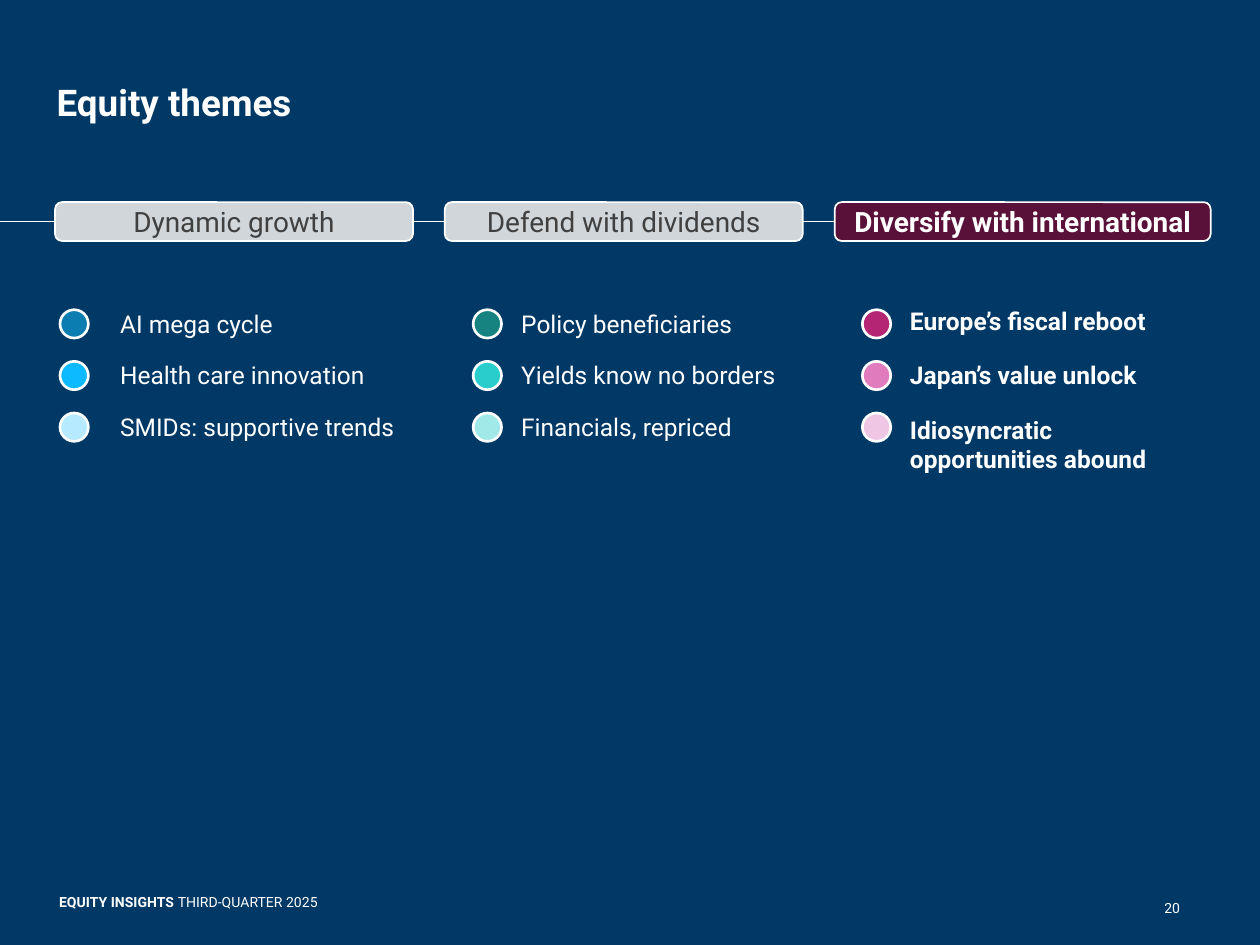
from pptx import Presentation
from pptx.dml.color import RGBColor
from pptx.enum import shapes, text
from pptx.oxml.ns import qn
from pptx.util import Pt
from lxml import etree

HUES = {
    "navy": "003866", "white": "FFFFFF", "grey": "D1D6DA", "ink": "404040",
    "wine": "5A1139",
    "blue": "0B7DB1", "sky": "0DB9FF", "ice": "B6EAFF",
    "teal": "168381", "aqua": "29CECC", "mint": "A1E8E8",
    "rose": "B42573", "pink": "E07CBD", "blush": "EFC6E4",
}
LEFT, MID, RIGHT = text.PP_ALIGN.LEFT, text.PP_ALIGN.CENTER, text.PP_ALIGN.RIGHT


def hue(name):
    return RGBColor.from_string(HUES[name])


class Deck:
    """Holds the font and the current slide; all lengths are in points."""

    def __init__(self, wide, high, font):
        self.file = Presentation()
        self.file.slide_width, self.file.slide_height = Pt(wide), Pt(high)
        self.font = font

    def page(self, fill):
        self.slide = self.file.slides.add_slide(self.file.slide_layouts[6])
        back = self.slide.background.fill
        back.solid()
        back.fore_color.rgb = hue(fill)

    def letter(self, shape, runs, size, tint="white", align=LEFT, anchor="TOP", lead=None):
        """Fill a shape with one paragraph of (words, bold) runs."""
        frame = shape.text_frame
        frame.word_wrap = True
        frame.margin_left = frame.margin_right = Pt(0)
        frame.margin_top = frame.margin_bottom = Pt(0)
        frame.vertical_anchor = text.MSO_ANCHOR[anchor]
        para = frame.paragraphs[0]
        para.alignment = align
        if lead:
            para.line_spacing = lead
        for words, bold in runs:
            run = para.add_run()
            run.text = words
            run.font.name, run.font.size, run.font.bold = self.font, Pt(size), bold
            run.font.color.rgb = hue(tint)

    def label(self, x, y, w, h, runs, size, **style):
        box = self.slide.shapes.add_textbox(Pt(x), Pt(y), Pt(w), Pt(h))
        self.letter(box, runs, size, **style)

    def shape(self, kind, x, y, w, h, fill, edge):
        item = self.slide.shapes.add_shape(kind, Pt(x), Pt(y), Pt(w), Pt(h))
        item.shadow.inherit = False
        item.fill.solid()
        item.fill.fore_color.rgb = hue(fill)
        item.line.color.rgb = hue("white")
        item.line.width = Pt(edge)
        return item

    def tab(self, x, y, w, h, fill, words, tint, bold):
        item = self.shape(shapes.MSO_SHAPE.ROUNDED_RECTANGLE, x, y, w, h, fill, 1)
        item.adjustments[0] = 0.18
        self.letter(item, [(words, bold)], 16, tint=tint, align=MID, anchor="MIDDLE")

    def dot(self, x, y, size, fill):
        self.shape(shapes.MSO_SHAPE.OVAL, x, y, size, size, fill, 1.5)

    def rule(self, x, y, end, width):
        line = self.slide.shapes.add_connector(
            shapes.MSO_CONNECTOR.STRAIGHT, Pt(x), Pt(y), Pt(end), Pt(y))
        line.line.color.rgb = hue("white")
        line.line.width = Pt(width)
        etree.SubElement(line._element.spPr, qn("a:effectLst"))


# tab: left, width, fill, ink, bold; list: dot left, text left, text width, top, pitch
THEMES = [
    ("Dynamic growth", (31.5, 204.5, "grey", "ink", False),
     (34.3, 68.6, 176, 176.4, 29.5),
     [("blue", "AI mega cycle"), ("sky", "Health care innovation"),
      ("ice", "SMIDs: supportive trends")]),
    ("Defend with dividends", (254.2, 204.5, "grey", "ink", False),
     (270.4, 297.8, 190, 176.4, 29.5),
     [("teal", "Policy beneficiaries"), ("aqua", "Yields know no borders"),
      ("mint", "Financials, repriced")]),
    ("Diversify with international", (477, 214.8, "wine", "white", True),
     (492.8, 520, 148, 175, 31),
     [("rose", "Europe’s fiscal reboot"), ("pink", "Japan’s value unlock"),
      ("blush", "Idiosyncratic opportunities abound")]),
]


def main():
    deck = Deck(720, 540, "Roboto")
    deck.page("navy")
    deck.label(32.4, 14.4, 670, 90, [("Equity themes", True)], 21,
               anchor="MIDDLE", lead=0.95)
    deck.rule(0, 126.6, 477, 0.75)

    for name, (left, wide, fill, ink, bold), (spot, start, room, top, step), items in THEMES:
        deck.tab(left, 115.5, wide, 22.2, fill, name, ink, bold)
        for row, (tint, words) in enumerate(items):
            deck.dot(spot, 177 + row * 29.5, 16.2, tint)
            deck.label(start, top + row * step, room, 17, [(words, bold)], 14)

    deck.label(33.8, 510.5, 443, 9.5,
               [("EQUITY INSIGHTS ", True), ("THIRD-QUARTER 2025", False)], 8)
    deck.label(644.4, 513.4, 30, 10, [("20", False)], 8, align=RIGHT, anchor="BOTTOM")
    deck.file.save("out.pptx")


if __name__ == "__main__":
    main()
